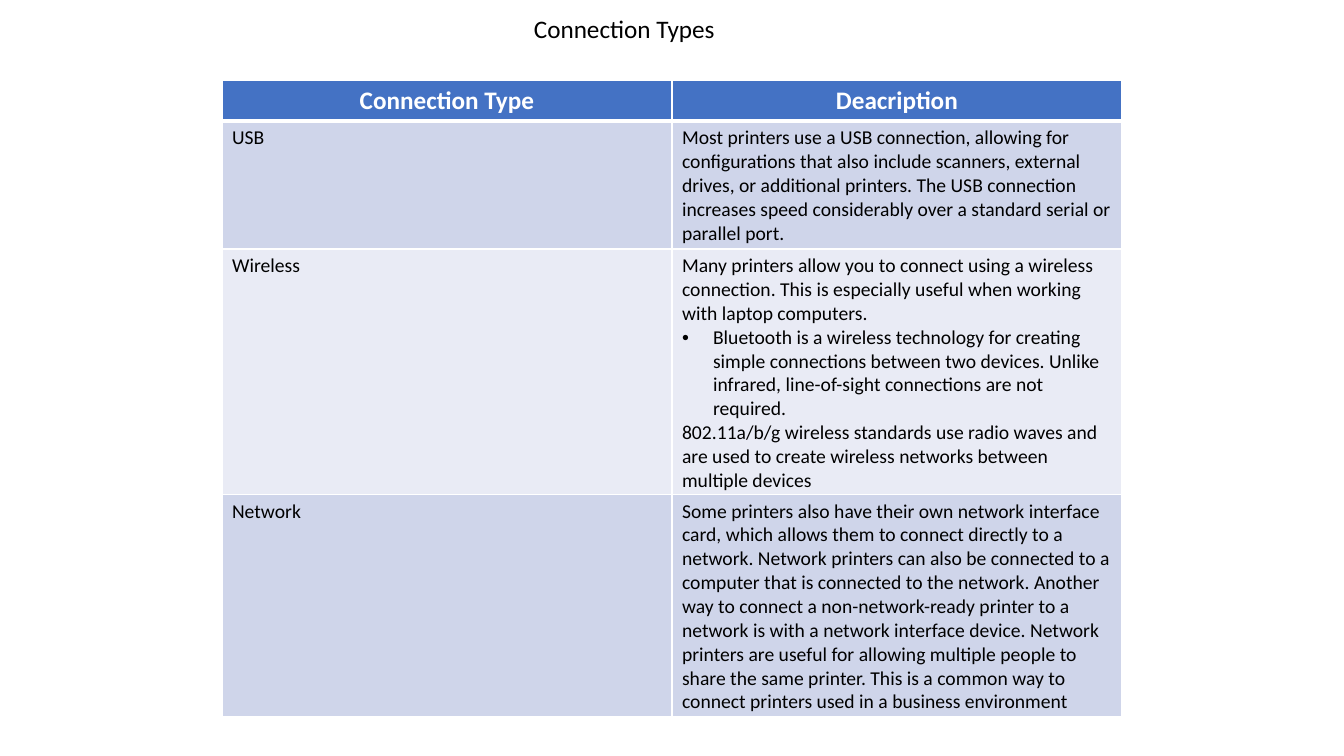
from lxml import etree
from pptx import Presentation
from pptx import util as u
from pptx.dml.color import RGBColor
from pptx.enum import text
from pptx.oxml import ns

TITLE = "Connection Types"
HEADERS = ["Connection Type", "Deacription"]
BULLET = "•"
CONNECTIONS = [
    ("USB", [
        ("Most printers use a USB connection, allowing for configurations that also include "
         "scanners, external drives, or additional printers. The USB connection increases "
         "speed considerably over a standard serial or parallel port.", False),
    ]),
    ("Wireless", [
        ("Many printers allow you to connect using a wireless connection. This is especially "
         "useful when working with laptop computers.", False),
        ("Bluetooth is a wireless technology for creating simple connections between two "
         "devices. Unlike infrared, line-of-sight connections are not required.", True),
        ("802.11a/b/g wireless standards use radio waves and are used to create wireless "
         "networks between multiple devices", False),
    ]),
    ("Network", [
        ("Some printers also have their own network interface card, which allows them to "
         "connect directly to a network. Network printers can also be connected to a computer "
         "that is connected to the network. Another way to connect a non-network-ready printer "
         "to a network is with a network interface device. Network printers are useful for "
         "allowing multiple people to share the same printer. This is a common way to connect "
         "printers used in a business environment", False),
    ]),
]
COLORS = {"black": "000000", "white": "FFFFFF", "header": "4472C4",
          "odd": "CFD5EA", "even": "E9EBF5"}
FONT = "Calibri"
SLIDE_SIZE = (1344, 756)
TITLE_BOX = (524, 8, 207, 40)
TABLE_AT = (222, 80)
COLUMN_WIDTH = 450
ROW_HEIGHTS = [41, 128, 245, 222]
BULLET_INDENT = 31


def px(length):
    return u.Emu(round(length * 914400 / 100.8))


def write(frame, paragraphs, size=14, color="black", bold=False, align=None):
    for index, (words, bulleted) in enumerate(paragraphs):
        paragraph = frame.paragraphs[0] if index == 0 else frame.add_paragraph()
        if align is not None:
            paragraph.alignment = align
        run = paragraph.add_run()
        run.text = words
        run.font.name = FONT
        run.font.size = u.Pt(size)
        run.font.bold = bold
        run.font.color.rgb = RGBColor.from_string(COLORS[color])
        if bulleted:
            properties = paragraph._p.get_or_add_pPr()
            properties.set("marL", str(px(BULLET_INDENT)))
            properties.set("indent", str(-px(BULLET_INDENT)))
            etree.SubElement(properties, ns.qn("a:buFont")).set("typeface", "Arial")
            etree.SubElement(properties, ns.qn("a:buChar")).set("char", BULLET)


def style_cell(cell, row):
    properties = cell._tc.get_or_add_tcPr()
    widths = {"L": 1, "R": 1, "T": 3 if row == 1 else 1, "B": 3 if row == 0 else 1}
    for side, width in widths.items():
        line = etree.SubElement(properties, ns.qn("a:ln" + side), w=str(u.Pt(width)))
        fill = etree.SubElement(line, ns.qn("a:solidFill"))
        etree.SubElement(fill, ns.qn("a:srgbClr"), val=COLORS["white"])
    band = "header" if row == 0 else "odd" if row % 2 else "even"
    cell.fill.solid()
    cell.fill.fore_color.rgb = RGBColor.from_string(COLORS[band])


def add_title(slide):
    frame = slide.shapes.add_textbox(*map(px, TITLE_BOX)).text_frame
    frame.word_wrap = False
    frame.auto_size = text.MSO_AUTO_SIZE.SHAPE_TO_FIT_TEXT
    write(frame, [(TITLE, False)], size=18)


def add_connection_table(slide):
    rows = [[[(header, False)] for header in HEADERS]]
    rows += [[[(name, False)], description] for name, description in CONNECTIONS]
    size = (COLUMN_WIDTH * len(HEADERS), sum(ROW_HEIGHTS))
    table = slide.shapes.add_table(len(rows), len(HEADERS), *map(px, TABLE_AT + size)).table
    for column in table.columns:
        column.width = px(COLUMN_WIDTH)
    header_format = {"size": 18, "color": "white", "bold": True,
                     "align": text.PP_ALIGN.CENTER}
    for row, contents in enumerate(rows):
        table.rows[row].height = px(ROW_HEIGHTS[row])
        for column, paragraphs in enumerate(contents):
            cell = table.cell(row, column)
            style_cell(cell, row)
            write(cell.text_frame, paragraphs, **(header_format if row == 0 else {}))


def main():
    presentation = Presentation()
    presentation.slide_width, presentation.slide_height = map(px, SLIDE_SIZE)
    slide = presentation.slides.add_slide(presentation.slide_layouts[6])
    add_title(slide)
    add_connection_table(slide)
    presentation.save("out.pptx")


if __name__ == "__main__":
    main()
